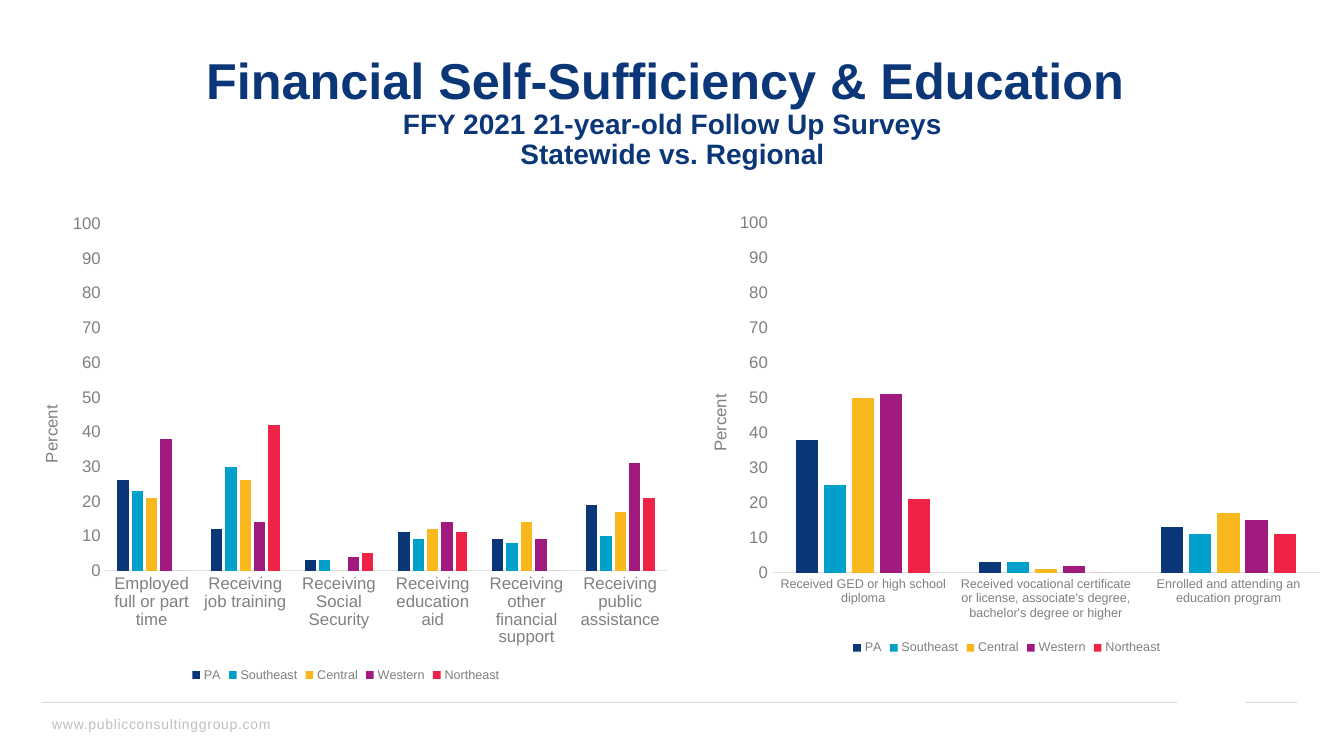
import copy

import pptx
import pptx.chart.data
import pptx.dml.color
import pptx.enum.chart
import pptx.enum.shapes
import pptx.enum.text
import pptx.oxml.ns
import pptx.oxml.xmlchemy
import pptx.util

Inches = pptx.util.Inches
Pt = pptx.util.Pt
RGBColor = pptx.dml.color.RGBColor
qn = pptx.oxml.ns.qn
OxmlElement = pptx.oxml.xmlchemy.OxmlElement

NAVY = RGBColor(0x0B, 0x36, 0x77)
CYAN = RGBColor(0x00, 0xA0, 0xCA)
AMBER = RGBColor(0xFA, 0xB8, 0x1F)
PURPLE = RGBColor(0xA1, 0x1B, 0x7E)
RED = RGBColor(0xEE, 0x23, 0x46)
DARK_GRAY = RGBColor(0x3B, 0x3B, 0x3B)
GRAY = RGBColor(0x80, 0x80, 0x80)
FOOTER_GRAY = RGBColor(0xBF, 0xBF, 0xBF)
RULE_GRAY = RGBColor(0xD9, 0xD9, 0xD9)
AXIS_GRAY = RGBColor(0xE2, 0xE2, 0xE2)

REGION_COLORS = {
    "PA": NAVY,
    "Southeast": CYAN,
    "Central": AMBER,
    "Western": PURPLE,
    "Northeast": RED,
}
FINANCES = {
    "Employed full or part time": (26, 23, 21, 38, 0),
    "Receiving job training": (12, 30, 26, 14, 42),
    "Receiving Social Security": (3, 3, 0, 4, 5),
    "Receiving education aid": (11, 9, 12, 14, 11),
    "Receiving other financial support": (9, 8, 14, 9, 0),
    "Receiving public assistance": (19, 10, 17, 31, 21),
}
EDUCATION = {
    "Received GED or high school diploma": (38, 25, 50, 51, 21),
    "Received vocational certificate or license, associate's degree, "
    "bachelor's degree or higher": (3, 3, 1, 2, 0),
    "Enrolled and attending an education program": (13, 11, 17, 15, 11),
}


def set_values(target, values):
    for name, value in values.items():
        setattr(target, name, value)


def format_font(font, size, color, bold=False):
    set_values(font, {"name": "Arial", "size": Pt(size), "bold": bold})
    font.color.rgb = color


def add_title(slide, lines):
    title = slide.shapes.title
    set_values(title, {"left": Inches(0.44), "top": Inches(0.4),
                       "width": Inches(12.46), "height": Inches(1.45)})
    frame = title.text_frame
    set_values(frame, {"word_wrap": True,
                       "auto_size": pptx.enum.text.MSO_AUTO_SIZE.NONE,
                       "vertical_anchor": pptx.enum.text.MSO_ANCHOR.MIDDLE})
    para = frame.paragraphs[0]
    set_values(para, {"alignment": pptx.enum.text.PP_ALIGN.CENTER,
                      "line_spacing": 0.9})
    for index, (text, size) in enumerate(lines):
        if index:
            para.add_line_break()
            para._p[-1].append(copy.deepcopy(span._r.rPr))
        span = para.add_run()
        span.text = text
        format_font(span.font, size, NAVY, True)


def add_footer(slide, text):
    box = slide.shapes.add_textbox(
        Inches(0.42), Inches(7.05), Inches(3.87), Inches(0.28))
    box.text_frame.word_wrap = True
    span = box.text_frame.paragraphs[0].add_run()
    span.text = text
    format_font(span.font, 10, FOOTER_GRAY)
    span._r.get_or_add_rPr().set("spc", "50")


def add_rule(slide, start, end):
    rule = slide.shapes.add_connector(
        pptx.enum.shapes.MSO_CONNECTOR.STRAIGHT,
        Inches(start), Inches(6.97), Inches(end), Inches(6.97))
    rule.line.color.rgb = RULE_GRAY
    rule.line.width = Pt(0.5)
    rule._element.spPr.append(OxmlElement("a:effectLst"))


def set_layout(parent, position, settings):
    for old in parent.findall(qn("c:layout")):
        parent.remove(old)
    layout = OxmlElement("c:layout")
    manual = OxmlElement("c:manualLayout")
    layout.append(manual)
    for name, value in settings.items():
        item = OxmlElement("c:" + name)
        item.set("val", str(value))
        manual.append(item)
    parent.insert(position, layout)


def format_axes(chart, category_size):
    categories, values = chart.category_axis, chart.value_axis
    for axis, size in ((categories, category_size), (values, 12)):
        set_values(axis, {"has_major_gridlines": False,
                          "major_tick_mark": pptx.enum.chart.XL_TICK_MARK.NONE,
                          "minor_tick_mark": pptx.enum.chart.XL_TICK_MARK.NONE})
        format_font(axis.tick_labels.font, size, GRAY)
    categories.format.line.color.rgb = AXIS_GRAY
    categories.format.line.width = Pt(0.75)
    values.format.line.fill.background()
    set_values(values, {"minimum_scale": 0, "maximum_scale": 100, "major_unit": 10})
    span = values.axis_title.text_frame.paragraphs[0].add_run()
    span.text = "Percent"
    format_font(span.font, 12, GRAY)
    set_layout(values.axis_title._element, 1,
               {"xMode": "edge", "yMode": "edge", "x": 0.04, "y": 0.41})


def add_survey_chart(slide, left, width, height, results, category_size, plot_height):
    data = pptx.chart.data.CategoryChartData()
    data.categories = list(results)
    for region, values in zip(REGION_COLORS, zip(*results.values())):
        data.add_series(region, values)
    chart = slide.shapes.add_chart(
        pptx.enum.chart.XL_CHART_TYPE.COLUMN_CLUSTERED,
        Inches(left), Inches(2.03), Inches(width), Inches(height), data).chart
    set_values(chart, {"has_title": False, "has_legend": True})
    format_font(chart.font, 10, DARK_GRAY)
    set_values(chart.legend, {
        "position": pptx.enum.chart.XL_LEGEND_POSITION.BOTTOM,
        "include_in_layout": False})
    format_font(chart.legend.font, 9, GRAY)
    plot = chart.plots[0]
    set_values(plot, {"gap_width": 219, "overlap": -27, "vary_by_categories": False})
    for series in plot.series:
        series.format.fill.solid()
        series.format.fill.fore_color.rgb = REGION_COLORS[series.name]
    format_axes(chart, category_size)
    set_layout(chart._chartSpace.chart.plotArea, 0,
               {"layoutTarget": "inner", "xMode": "edge", "yMode": "edge",
                "x": 0.14, "y": 0.04, "w": 0.84, "h": plot_height})


def main():
    deck = pptx.Presentation()
    set_values(deck, {"slide_width": Inches(13.33), "slide_height": Inches(7.5)})
    page = deck.slides.add_slide(deck.slide_layouts[5])
    add_footer(page, "www.publicconsultinggroup.com")
    add_rule(page, 0.42, 11.67)
    add_rule(page, 12.35, 12.86)
    add_title(page, (("Financial Self-Sufficiency & Education ", 36),
                     ("FFY 2021 21-year-old Follow Up Surveys", 20),
                     ("Statewide vs. Regional", 20)))
    add_survey_chart(page, 0.11, 6.64, 4.78, FINANCES, 12, 0.72)
    add_survey_chart(page, 6.75, 6.47, 4.51, EDUCATION, 9, 0.77)
    deck.save("out.pptx")


if __name__ == "__main__":
    main()
